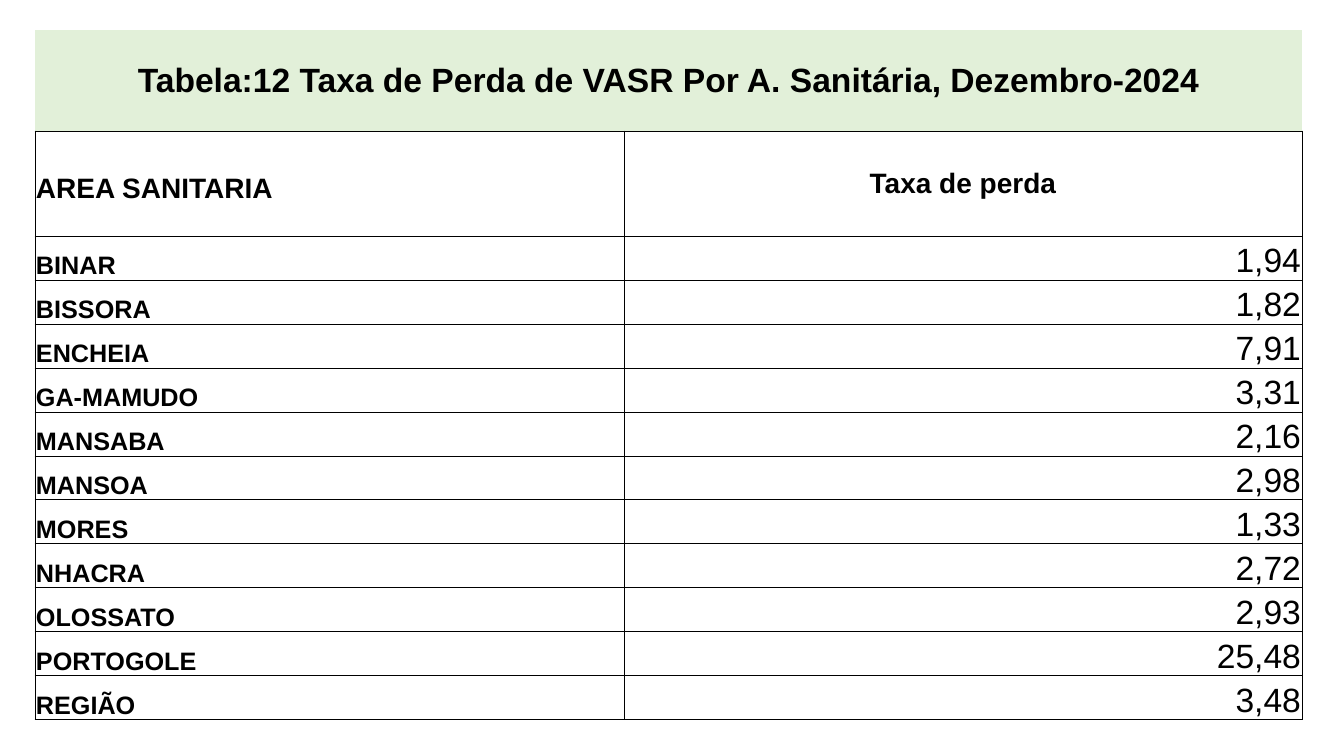
from lxml.etree import SubElement
from pptx import Presentation
from pptx.dml.color import RGBColor
from pptx.enum.text import MSO_ANCHOR, PP_ALIGN
from pptx.oxml.ns import qn
from pptx.util import Emu, Pt

EMU_PER_PX = 914400 / 100.8


def px(length):
    return Emu(round(length * EMU_PER_PX))


def color(hex_code):
    return RGBColor.from_string(hex_code)


class SlideBuilder:
    font = "Arial"
    ink = "000000"
    title_fill = "E2F0D9"
    border_width = Pt(0.5)

    def __init__(self, slide):
        self.slide = slide

    def table(self, left, top, widths, heights):
        table = self.slide.shapes.add_table(
            len(heights), len(widths), px(left), px(top),
            px(sum(widths)), px(sum(heights))).table
        table.first_row = table.horz_banding = False
        for column, width in zip(table.columns, widths):
            column.width = px(width)
        for row, height in zip(table.rows, heights):
            row.height = px(height)
        return table

    def borders(self, cell, sides):
        properties = cell._tc.get_or_add_tcPr()
        for side in "LRTB":
            line = SubElement(properties, qn(f"a:ln{side}"))
            if side in sides:
                line.set("w", str(self.border_width))
                fill = SubElement(line, qn("a:solidFill"))
                SubElement(fill, qn("a:srgbClr")).set("val", self.ink)
            else:
                line.set("w", "0")
                SubElement(line, qn("a:noFill"))

    def cell(self, cell, text, size, bold=True, align=PP_ALIGN.LEFT,
             anchor=MSO_ANCHOR.BOTTOM, sides="LRTB", fill=None, bottom=0):
        self.borders(cell, sides)
        if fill:
            cell.fill.solid()
            cell.fill.fore_color.rgb = color(fill)
        else:
            cell.fill.background()
        cell.margin_left = cell.margin_right = cell.margin_top = px(1)
        cell.margin_bottom = px(bottom)
        cell.vertical_anchor = anchor
        cell.text_frame.text = text
        paragraph = cell.text_frame.paragraphs[0]
        paragraph.alignment = align
        for run in paragraph.runs:
            run.font.name = self.font
            run.font.size = Pt(size)
            run.font.bold = bold
            run.font.color.rgb = color(self.ink)


LOSS_RATES = [
    ("BINAR", "1,94"),
    ("BISSORA", "1,82"),
    ("ENCHEIA", "7,91"),
    ("GA-MAMUDO", "3,31"),
    ("MANSABA", "2,16"),
    ("MANSOA", "2,98"),
    ("MORES", "1,33"),
    ("NHACRA", "2,72"),
    ("OLOSSATO", "2,93"),
    ("PORTOGOLE", "25,48"),
    ("REGIÃO", "3,48"),
]


def main():
    presentation = Presentation()
    presentation.slide_width, presentation.slide_height = px(1344), px(756)
    builder = SlideBuilder(
        presentation.slides.add_slide(presentation.slide_layouts[6]))
    rates = builder.table(35, 30, [589, 678],
                          [101, 105] + [44] * len(LOSS_RATES))
    centred = {"align": PP_ALIGN.CENTER, "anchor": MSO_ANCHOR.MIDDLE}

    # Title band across both columns
    title = rates.cell(0, 0)
    title.merge(rates.cell(0, 1))
    builder.cell(title,
                 "Tabela:12 Taxa de Perda de VASR Por A. Sanitária, Dezembro-2024",
                 24, sides="B", fill=builder.title_fill, **centred)
    builder.borders(rates.cell(0, 1), "B")

    # Column headings
    builder.cell(rates.cell(1, 0), "AREA SANITARIA", 20, bottom=32)
    builder.cell(rates.cell(1, 1), "Taxa de perda", 20, **centred)

    # Loss rate of each health area
    for row, (area, rate) in enumerate(LOSS_RATES, start=2):
        builder.cell(rates.cell(row, 0), area, 18)
        builder.cell(rates.cell(row, 1), rate, 24, bold=False,
                     align=PP_ALIGN.RIGHT)

    presentation.save("out.pptx")


if __name__ == "__main__":
    main()
